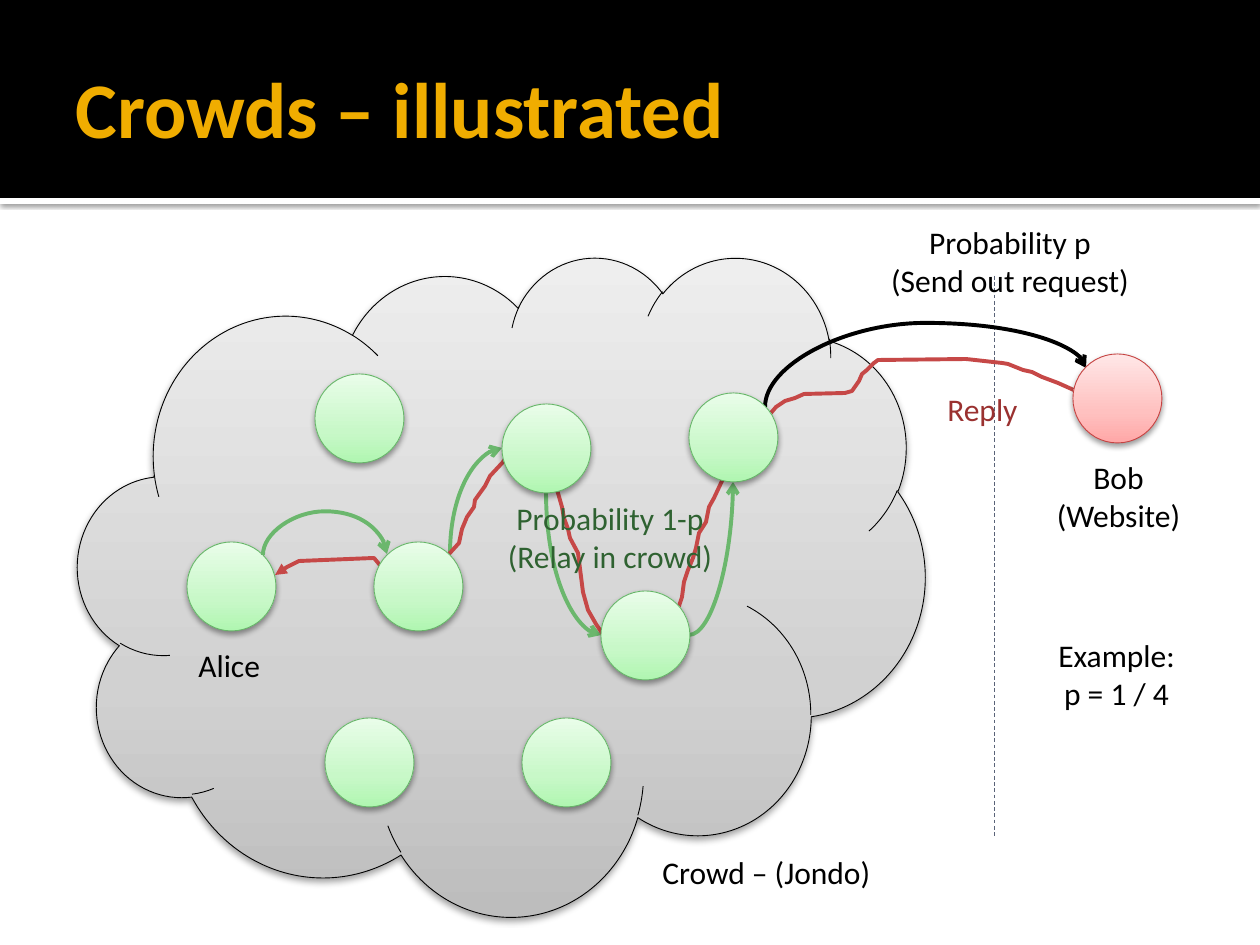
from copy import deepcopy
from dataclasses import dataclass

from pptx import Presentation
from pptx.dml.color import RGBColor
from pptx.enum.dml import MSO_LINE
from pptx.enum.shapes import MSO_CONNECTOR, MSO_SHAPE
from pptx.enum.text import MSO_ANCHOR, MSO_AUTO_SIZE, PP_ALIGN
from pptx.oxml import parse_xml
from pptx.oxml.ns import nsdecls, qn
from pptx.util import Emu, Pt

SCALE = 914400 / 126
TITLE_ONLY = 5
RECTANGLE, CLOUD, CIRCLE = MSO_SHAPE.RECTANGLE, MSO_SHAPE.CLOUD, MSO_SHAPE.OVAL
STRAIGHT, CURVE = MSO_CONNECTOR.STRAIGHT, MSO_CONNECTOR.CURVE
DASH = MSO_LINE.DASH
LEFT, CENTER = PP_ALIGN.LEFT, PP_ALIGN.CENTER
MIDDLE = MSO_ANCHOR.MIDDLE
FIT_TEXT, NO_FIT = MSO_AUTO_SIZE.SHAPE_TO_FIT_TEXT, MSO_AUTO_SIZE.NONE
NODE_SIZE = 89


@dataclass(frozen=True)
class Theme:
    """Colours, gradients and type sizes of the slide."""
    font: str = "Calibri"
    title_size: int = 45
    label_size: int = 18
    thin: float = 0.5
    thick: float = 2.25
    black: str = "000000"
    white: str = "FFFFFF"
    title: str = "F0AD00"
    divider: str = "5A6378"
    relay: str = "6BB76D"
    relay_text: str = "2F6231"
    reply: str = "C64847"
    reply_text: str = "9A3130"
    member_line: str = "67B569"
    website_line: str = "C54342"
    cloud_fill: tuple = ("BDBDBD", "D1D1D1", "EEEEEE")
    member_fill: tuple = ("B0F6B1", "C8F8C8", "E9FDE9")
    website_fill: tuple = ("FFA7A7", "FFC1C0", "FFE7E7")
    stops: tuple = (0, 0.35, 1)


@dataclass(frozen=True)
class Shadow:
    """A soft shadow falling straight down, in points and percent."""
    opacity: int
    blur: float
    distance: float


@dataclass(frozen=True)
class Label:
    """A block of text lines in a box."""
    box: tuple
    lines: tuple
    color: str
    align: int = CENTER


@dataclass(frozen=True)
class Hop:
    """A curved arrow; bend is how far it bulges past its start."""
    start: tuple
    end: tuple
    color: str
    vertical: bool = True
    bend: int = 0


THEME = Theme()
BAR_SHADOW = Shadow(60, 2.5, 0.8)
SOFT_SHADOW = Shadow(38, 3.5, 2)

BACK_MEMBERS = ((315, 374), (187, 542), (325, 718), (522, 718))
FRONT_MEMBERS = ((502, 404), (374, 542), (689, 393), (601, 591))
WEBSITE = (1073, 354)

HOPS = (
    Hop((263, 555), (387, 554), THEME.relay, bend=44),
    Hop((450, 554), (502, 448), THEME.relay),
    Hop((546, 492), (601, 635), THEME.relay),
    Hop((689, 635), (733, 482), THEME.relay, vertical=False),
    Hop((765, 407), (1086, 368), THEME.black, bend=84),
)

REPLY_ROUTE = (
    (1076, 391), (1058, 383), (1042, 377), (1032, 372), (1023, 370), (1008, 364),
    (1002, 363), (966, 359), (878, 360), (874, 363), (867, 370), (862, 374),
    (859, 381), (852, 391), (845, 393), (804, 394), (795, 398), (785, 401),
    (776, 407), (765, 420), (757, 430), (755, 436), (748, 447), (743, 449),
    (738, 456), (722, 481), (714, 498), (709, 507), (706, 522), (699, 533),
    (696, 548), (693, 558), (688, 570), (684, 582), (682, 597), (677, 612),
    (672, 633), (663, 648), (645, 653), (614, 650), (609, 641), (602, 633),
    (596, 624), (588, 610), (583, 592), (578, 553), (570, 538), (568, 529),
    (564, 518), (562, 507), (558, 493), (552, 478), (548, 466), (539, 457),
    (528, 449), (510, 452), (503, 462), (490, 476), (485, 486), (475, 500),
    (474, 507), (467, 517), (462, 529), (459, 543), (449, 554), (444, 562),
    (435, 571), (422, 576), (391, 575), (384, 570), (374, 558), (299, 561),
    (287, 567), (275, 575),
)

BACK_LABELS = (
    Label((1043, 452, 151, 89), ("Bob", "(Website)"), THEME.black),
    Label((186, 640, 89, 50), ("Alice",), THEME.black, LEFT),
    Label((876, 217, 268, 89), ("Probability p", "(Send out request)"), THEME.black),
)
FRONT_LABELS = (
    Label((935, 384, 98, 50), ("Reply",), THEME.reply_text, LEFT),
    Label((493, 493, 234, 89), ("Probability 1-p", "(Relay in crowd)"), THEME.relay_text),
    Label((650, 847, 238, 50), ("Crowd – (Jondo)",), THEME.black, LEFT),
    Label((1043, 630, 147, 89), ("Example:", "p = 1 / 4"), THEME.black),
)


def px(length: float) -> Emu:
    """Turn px into EMU."""
    return Emu(round(length * SCALE))


def rgb(color: str) -> RGBColor:
    """Turn a hex string into a colour."""
    return RGBColor.from_string(color)


def set_line(item, color: str, width: float, head: str = "") -> None:
    """Colour a line and give it an optional arrowhead at its end."""
    item.line.color.rgb = rgb(color)
    item.line.width = Pt(width)
    if head:
        outline = item._element.spPr.find(qn("a:ln"))
        outline.append(parse_xml(f'<a:tailEnd {nsdecls("a")} type="{head}"/>'))


def set_shadow(shape, shadow: Shadow) -> None:
    """Give a shape a shadow below it."""
    shape.shadow.inherit = False
    effects = shape._element.spPr.find(qn("a:effectLst"))
    effects.append(parse_xml(
        f'<a:outerShdw {nsdecls("a")} blurRad="{Pt(shadow.blur)}" dist="{Pt(shadow.distance)}" '
        f'dir="5400000" rotWithShape="0"><a:srgbClr val="{THEME.black}">'
        f'<a:alpha val="{shadow.opacity * 1000}"/></a:srgbClr></a:outerShdw>'))


def draw_bar(page, top: int, height: int, color: str):
    """Draw a plain bar across the page."""
    bar = page.shapes.add_shape(RECTANGLE, 0, px(top), px(1260), px(height))
    bar.shadow.inherit = False
    bar.fill.solid()
    bar.fill.fore_color.rgb = rgb(color)
    bar.line.fill.background()
    return bar


def draw_glossy(page, kind: int, box: tuple, colors: tuple, outline: str) -> None:
    """Draw a shape with a three-stop gradient and a soft shadow."""
    shape = page.shapes.add_shape(kind, *map(px, box))
    shape.fill.gradient()
    shape.fill.gradient_angle = 90
    stop_list = shape._element.spPr.find(".//" + qn("a:gsLst"))
    stop_list.insert(0, deepcopy(stop_list[0]))
    for stop, position, color in zip(shape.fill.gradient_stops, THEME.stops, colors):
        stop.position = position
        stop.color.rgb = rgb(color)
    set_line(shape, outline, THEME.thin)
    set_shadow(shape, SOFT_SHADOW)


def draw_node(page, corner: tuple, colors: tuple, outline: str) -> None:
    """Draw one round network node."""
    draw_glossy(page, CIRCLE, (*corner, NODE_SIZE, NODE_SIZE), colors, outline)


def draw_connector(page, kind: int, start: tuple, end: tuple):
    """Draw a connector without a shadow."""
    connector = page.shapes.add_connector(kind, *map(px, (*start, *end)))
    connector._element.spPr.append(parse_xml(f'<a:effectLst {nsdecls("a")}/>'))
    return connector


def draw_hop(page, hop: Hop) -> None:
    """Draw a curved arrow, turned by 90 degrees if it leaves vertically."""
    (left, top), (right, bottom) = hop.start, hop.end
    middle_x, middle_y = (left + right) / 2, (top + bottom) / 2
    across, down = right - left, bottom - top
    if hop.vertical:
        across, down = down, -across
    arrow = draw_connector(page, CURVE,
                           (middle_x - across / 2, middle_y - down / 2),
                           (middle_x + across / 2, middle_y + down / 2))
    set_line(arrow, hop.color, THEME.thick, "arrow")
    properties = arrow._element.spPr
    if hop.vertical:
        properties.find(qn("a:xfrm")).set("rot", "5400000")
    geometry = properties.find(qn("a:prstGeom"))
    if hop.bend:
        amount = round(hop.bend / abs(across) * 100000)
        guides = geometry.get_or_add_avLst()
        guides.append(parse_xml(f'<a:gd {nsdecls("a")} name="adj1" fmla="val {amount}"/>'))
    else:
        geometry.set("prst", "curvedConnector2")


def draw_reply(page) -> None:
    """Draw the route of the reply back through the crowd."""
    builder = page.shapes.build_freeform(*REPLY_ROUTE[0], scale=SCALE)
    builder.add_line_segments(REPLY_ROUTE[1:], close=False)
    route = builder.convert_to_shape()
    route.shadow.inherit = False
    route.fill.background()
    set_line(route, THEME.reply, THEME.thick, "triangle")


def add_span(para, text: str, size: int, color: str, bold: bool = False) -> None:
    """Add one formatted run to a paragraph."""
    span = para.add_run()
    span.text = text
    span.font.name = THEME.font
    span.font.size = Pt(size)
    span.font.bold = bold
    span.font.color.rgb = rgb(color)


def draw_label(page, label: Label) -> None:
    """Draw a text box, one paragraph to a line."""
    frame = page.shapes.add_textbox(*map(px, label.box)).text_frame
    frame.word_wrap = False
    frame.auto_size = FIT_TEXT
    for index, line in enumerate(label.lines):
        para = frame.add_paragraph() if index else frame.paragraphs[0]
        para.alignment = label.align
        add_span(para, line, THEME.label_size, label.color)


def place_title(page, text: str) -> None:
    """Move the title in front of the bars and format it."""
    title = page.shapes.title
    title.left, title.top, title.width, title.height = map(px, (63, 21, 1134, 173))
    page.shapes._spTree.append(title._element)
    frame = title.text_frame
    frame.auto_size = NO_FIT
    frame.vertical_anchor = MIDDLE
    frame.margin_right = px(6)
    para = frame.paragraphs[0]
    para.alignment = LEFT
    add_span(para, text, THEME.title_size, THEME.title, True)


def main() -> None:
    """Build the deck and save it."""
    deck = Presentation()
    deck.slide_width, deck.slide_height = px(1260), px(945)
    page = deck.slides.add_slide(deck.slide_layouts[TITLE_ONLY])
    set_shadow(draw_bar(page, 198, 6, THEME.white), BAR_SHADOW)
    draw_bar(page, 0, 198, THEME.black)
    draw_glossy(page, CLOUD, (78, 256, 847, 659), THEME.cloud_fill, THEME.black)
    place_title(page, "Crowds – illustrated")
    divider = draw_connector(page, STRAIGHT, (994, 276), (994, 836))
    set_line(divider, THEME.divider, THEME.thin)
    divider.line.dash_style = DASH
    for corner in BACK_MEMBERS:
        draw_node(page, corner, THEME.member_fill, THEME.member_line)
    for hop in HOPS:
        draw_hop(page, hop)
    for label in BACK_LABELS:
        draw_label(page, label)
    draw_reply(page)
    for corner in FRONT_MEMBERS:
        draw_node(page, corner, THEME.member_fill, THEME.member_line)
    for label in FRONT_LABELS:
        draw_label(page, label)
    draw_node(page, WEBSITE, THEME.website_fill, THEME.website_line)
    deck.save("out.pptx")


if __name__ == "__main__":
    main()
